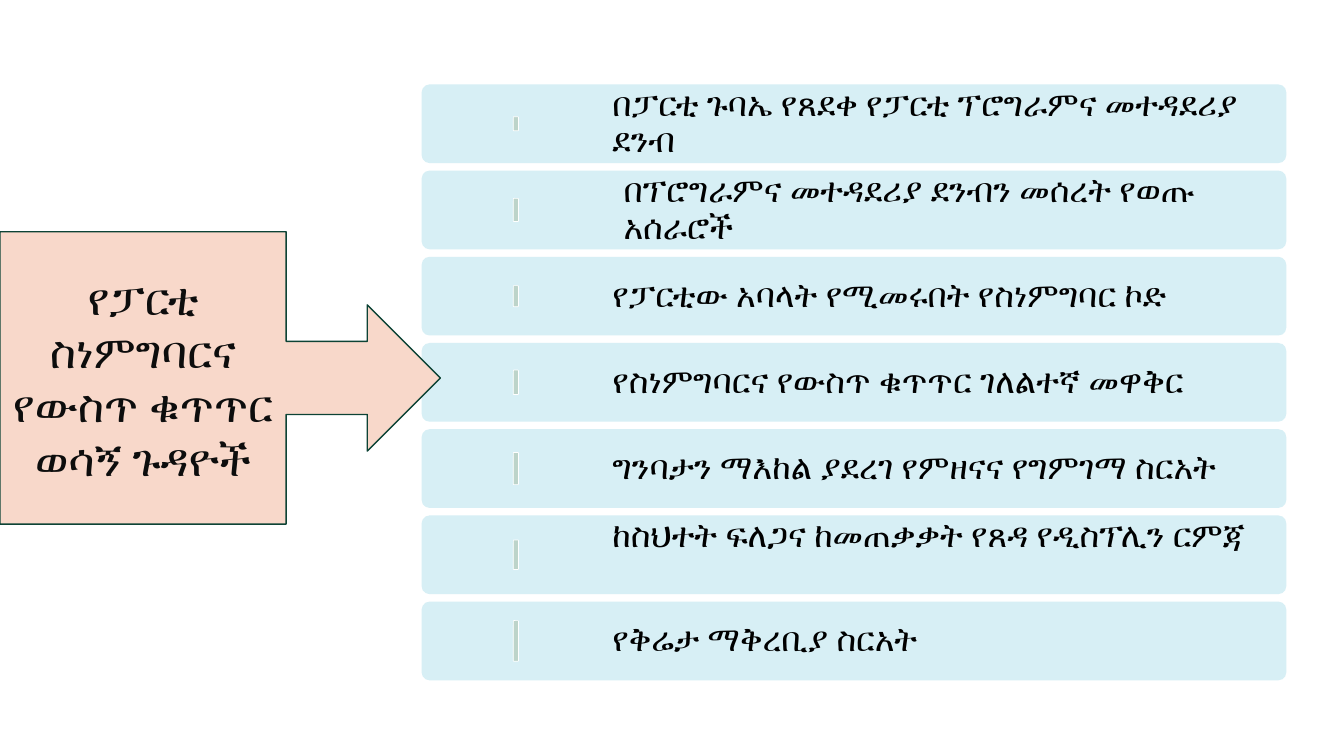
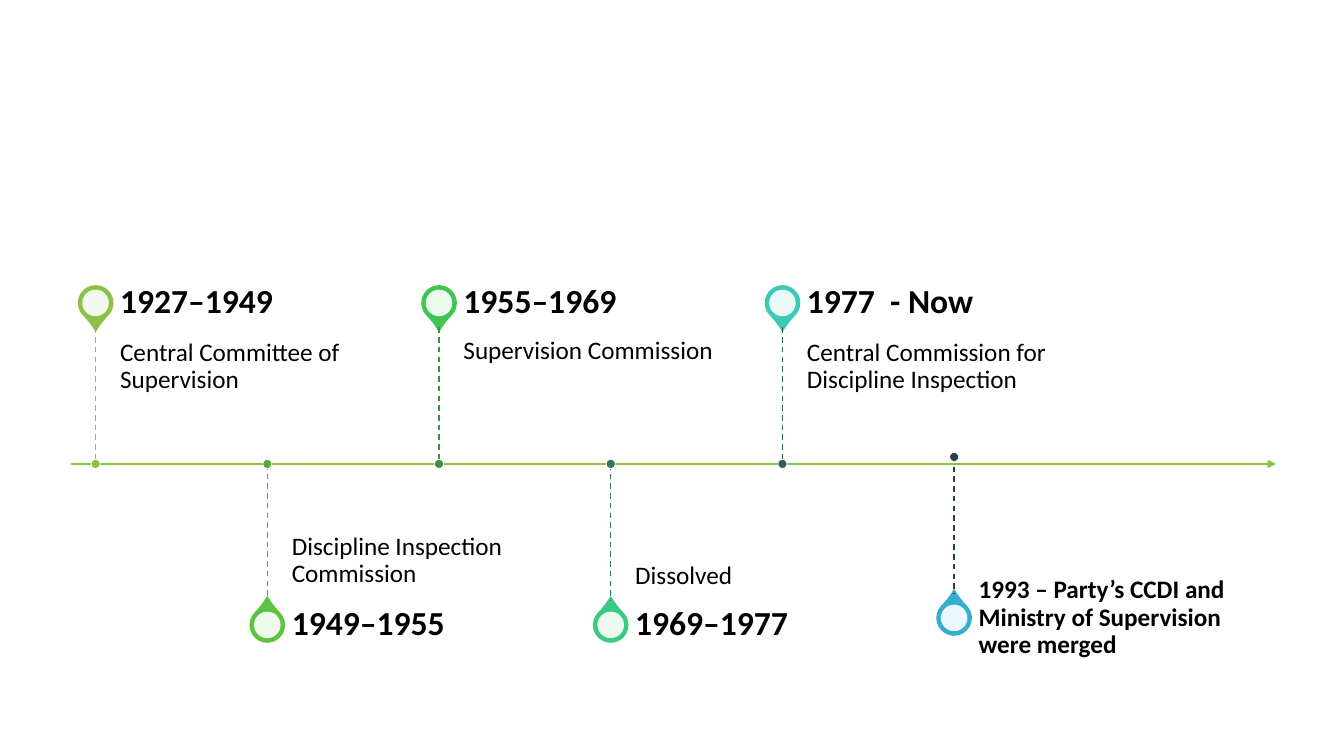
"""Build two slides: key matters of party ethics, and a timeline of control bodies."""
from pptx import Presentation
from pptx.dml.color import RGBColor as RGB
from pptx.enum.dml import MSO_LINE as Dash
from pptx.enum.shapes import MSO_CONNECTOR as Link, MSO_SHAPE as Kind
from pptx.enum.text import MSO_ANCHOR as Anchor, PP_ALIGN as Align
from pptx.oxml.ns import qn
from pptx.util import Pt
from lxml.etree import SubElement as Sub

FONT = "Calibri"
BLACK = RGB(0x00, 0x00, 0x00)
WHITE = RGB(0xFF, 0xFF, 0xFF)
INK = RGB(0x0D, 0x0D, 0x0D)
ICE = RGB(0xD7, 0xEF, 0xF5)
SAGE = RGB(0xBD, 0xD4, 0xCA)
PEACH = RGB(0xF8, 0xD8, 0xCA)
PINE = RGB(0x0D, 0x43, 0x35)
LIME = RGB(0x8B, 0xC1, 0x45)

EVEN = (7.2, 7.2, 7.2, 7.2)
ROWS = [
    ("በፓርቲ ጉባኤ የጸደቀ የፓርቲ ፕሮግራምና መተዳደሪያ ደንብ", 10, EVEN),
    ("በፕሮግራምና መተዳደሪያ ደንብን መሰረት የወጡ አሰራሮች", 16.5, (15, 7.2, 14, 7.2)),
    ("የፓርቲው አባላት የሚመሩበት የስነምግባር ኮድ", 15, EVEN),
    ("የስነምግባርና የውስጥ ቁጥጥር ገለልተኛ መዋቅር", 17.5, EVEN),
    ("ግንባታን ማእከል ያደረገ የምዘናና የግምገማ ስርአት", 23, EVEN),
    ("ከስህተት ፍለጋና ከመጠቃቃት የጸዳ የዲስፕሊን ርምጃ", 21, (7.2, 7.2, 7.2, 33)),
    ("የቅሬታ ማቅረቢያ ስርአት", 29, EVEN),
]
STEPS = [
    ("1927–1949", "Central Committee of Supervision", LIME, LIME),
    ("1949–1955", "Discipline Inspection Commission",
     RGB(0x5D, 0xC4, 0x42), RGB(0x54, 0xAA, 0x3E)),
    ("1955–1969", "Supervision Commission",
     RGB(0x3F, 0xC6, 0x52), RGB(0x3A, 0x90, 0x47)),
    ("1969–1977", "Dissolved", RGB(0x3C, 0xC9, 0x82), RGB(0x34, 0x77, 0x56)),
    ("1977  - Now", "Central Commission for Discipline Inspection",
     RGB(0x39, 0xCB, 0xB5), RGB(0x2E, 0x5F, 0x59)),
    ("1993 – Party’s CCDI and Ministry of Supervision were merged", "",
     RGB(0x36, 0xAF, 0xCE), RGB(0x26, 0x41, 0x49)),
]


class Deck:
    """Hold the style and the current slide."""

    def __init__(self):
        self.show = Presentation()
        self.show.slide_width, self.show.slide_height = Pt(960), Pt(540)

    def page(self):
        """Start a blank slide."""
        self.slide = self.show.slides.add_slide(self.show.slide_layouts[6])

    def shape(self, kind, left, top, width, height, fill, edge=None, thick=0.5):
        """Draw a filled preset shape."""
        item = self.slide.shapes.add_shape(kind, Pt(left), Pt(top), Pt(width), Pt(height))
        item.shadow.inherit = False
        item.fill.solid()
        item.fill.fore_color.rgb = fill
        if edge is None:
            item.line.fill.background()
        else:
            item.line.color.rgb = edge
            item.line.width = Pt(thick)
        return item

    def disc(self, x, y, size, fill, edge=None):
        """Draw a circle around a centre."""
        return self.shape(Kind.OVAL, x - size / 2, y - size / 2, size, size, fill, edge)

    def card(self, left, top, width, height, fill, edge=None):
        """Draw a box with slightly rounded corners."""
        self.shape(Kind.ROUNDED_RECTANGLE, left, top, width, height, fill,
                   edge).adjustments[0] = 0.1

    def label(self, frame, text, size, color=BLACK, bold=False):
        """Put one styled paragraph in a frame and return it."""
        frame.word_wrap = True
        para = frame.paragraphs[0]
        para.text = text
        font = para.font
        font.name, font.size, font.bold = FONT, Pt(size), bold
        font.color.rgb = color
        return para

    def text(self, text, left, top, width, height, size, pads, anchor=Anchor.MIDDLE, bold=False):
        """Add a text box with its own insets."""
        box = self.slide.shapes.add_textbox(Pt(left), Pt(top), Pt(width), Pt(height))
        frame = box.text_frame
        frame.vertical_anchor = anchor
        (frame.margin_left, frame.margin_top,
         frame.margin_right, frame.margin_bottom) = map(Pt, pads)
        self.label(frame, text, size, bold=bold).line_spacing = 0.9

    def line(self, x1, y1, x2, y2, color, thick=1, dash=None, arrow=False):
        """Draw a straight line, dashed or with an arrowhead if asked."""
        item = self.slide.shapes.add_connector(Link.STRAIGHT, Pt(x1), Pt(y1), Pt(x2), Pt(y2))
        item.line.color.rgb = color
        item.line.width = Pt(thick)
        if dash:
            item.line.dash_style = dash
        props = item._element.spPr
        if arrow:
            Sub(props.find(qn("a:ln")), qn("a:tailEnd"), type="triangle")
        Sub(props, qn("a:effectLst"))

    def pin(self, x, y, color, turn):
        """Draw a map pin whose tip follows the turn."""
        size = 24.5
        drop = self.shape(Kind.TEAR, x - size / 2, y - size / 2, size, size, color, color, 1)
        drop.adjustments[0] = 1.15
        drop.rotation = turn
        hole = self.disc(x, y, 19, WHITE)
        tint = hole._element.spPr.find(qn("a:solidFill"))[0]
        Sub(tint, qn("a:alpha"), val="90000")

    def step(self, x, axis, side, year, body, hue, tone):
        """Draw one event; side is -1 above the axis and 1 below it."""
        tip, mid = axis + side * 97.5, axis + side * 115
        self.pin(x, mid, hue, 135 if side < 0 else 315)
        left, width = x + 17.5, 204.5
        if body:
            pads = (0, 8.6, 8.6, 13.7) if side < 0 else (0, 13.7, 0, 8.6)
            self.text(body, left, min(tip, axis), width, 97.5, 18, pads,
                      Anchor.TOP if side < 0 else Anchor.BOTTOM)
        high, size, pad = (34.5, 24, 12) if body else (54.5, 18, 8.6)
        self.text(year, left, mid - high / 2, width, high, size, (0, 0, pad, 0), bold=True)
        self.line(x, min(tip, axis), x, max(tip, axis), tone, dash=Dash.DASH)
        self.disc(x, axis, 6.5, tone, WHITE)


def main():
    """Build both slides and save them."""
    deck = Deck()

    deck.page()
    high = 56.2
    for i, (text, tall, pads) in enumerate(ROWS):
        top = 60.3 + 61.57 * i
        deck.card(301.2, top, 617.6, high, ICE)
        deck.text(text, 430.4, top, 488.6, high, 24, pads)
        deck.card(366.7, top + (high - tall) / 2, 3.6, tall, SAGE, WHITE)
    call = deck.shape(Kind.RIGHT_ARROW_CALLOUT, 0, 165.6, 314.6, 208.8, PEACH, PINE, 1)
    call.text_frame.vertical_anchor = Anchor.MIDDLE
    deck.label(call.text_frame, "የፓርቲ ስነምግባርና የውስጥ ቁጥጥር ወሳኝ ጉዳዮች",
               32, INK).alignment = Align.CENTER

    deck.page()
    axis = 331.4
    deck.line(50.4, axis, 911.5, axis, LIME, 1.5, arrow=True)
    for i, (year, body, hue, tone) in enumerate(STEPS):
        deck.step(68.3 + 122.65 * i, axis if body else axis - 5, 1 if i % 2 else -1,
                  year, body, hue, tone)

    deck.show.save("out.pptx")


if __name__ == "__main__":
    main()
